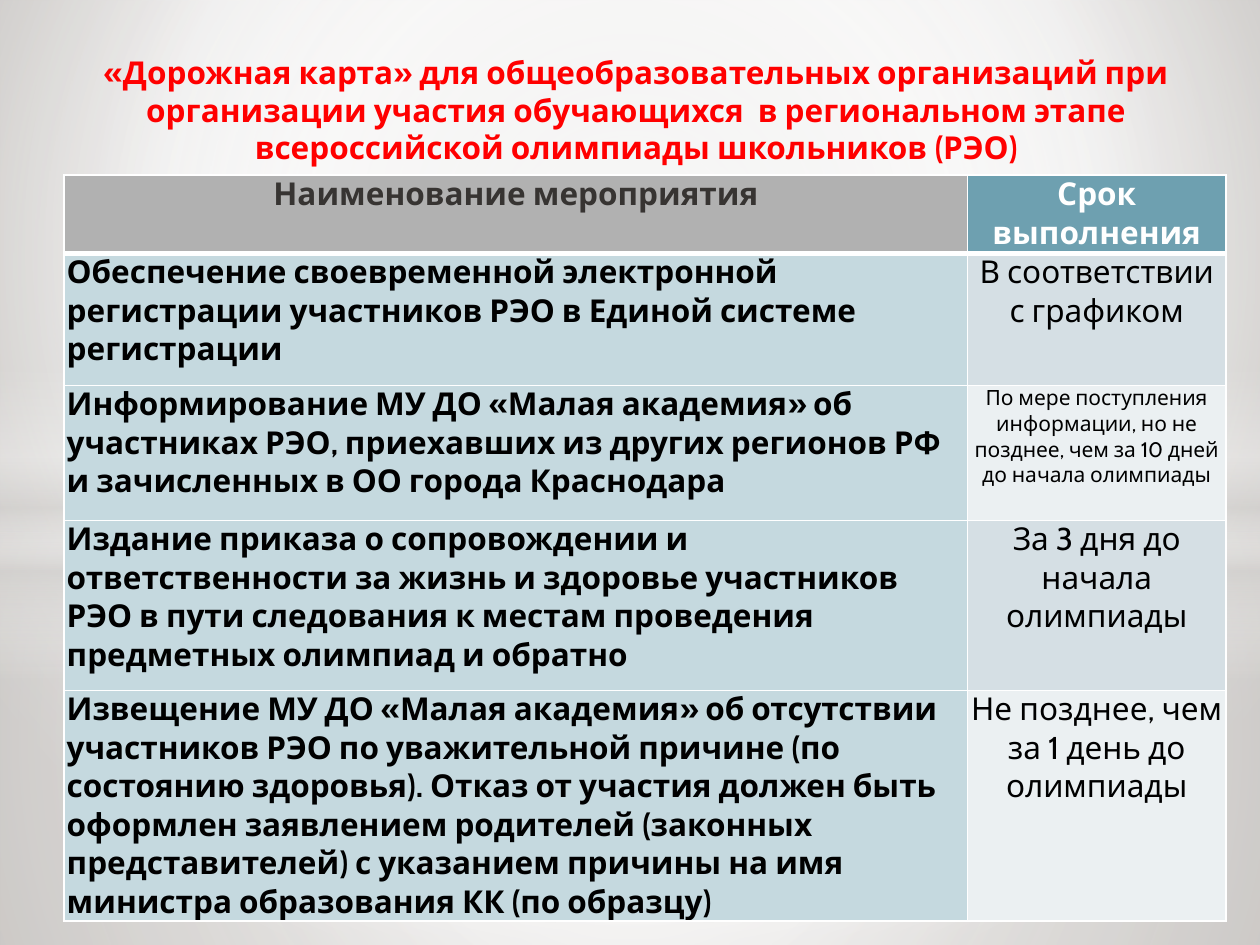
from lxml.etree import SubElement
from pptx import Presentation
from pptx.dml.color import RGBColor
from pptx.enum.shapes import MSO_SHAPE as Shape
from pptx.enum.text import MSO_ANCHOR as Anchor, PP_ALIGN as Align
from pptx.oxml import parse_xml
from pptx.oxml.ns import nsdecls, qn
from pptx.util import Emu, Inches, Pt

TITLE = ("«Дорожная карта» для общеобразовательных организаций при организации участия "
         "обучающихся  в региональном этапе всероссийской олимпиады школьников (РЭО)")
HEADER = ("Наименование мероприятия", "Срок выполнения")
EVENTS = [
    ("Обеспечение своевременной электронной регистрации участников РЭО в Единой системе "
     "регистрации", "В соответствии с графиком"),
    ("Информирование МУ ДО «Малая академия» об участниках РЭО, приехавших из других регионов "
     "РФ и зачисленных в ОО города Краснодара",
     "По мере поступления информации, но не позднее, чем за 10 дней до начала олимпиады"),
    ("Издание приказа о сопровождении и ответственности за жизнь и здоровье участников РЭО в "
     "пути следования к местам проведения предметных олимпиад и обратно",
     "За 3 дня до начала олимпиады"),
    ("Извещение МУ ДО «Малая академия» об отсутствии участников РЭО по уважительной причине "
     "(по состоянию здоровья). Отказ от участия должен быть оформлен заявлением родителей "
     "(законных представителей) с указанием причины на имя министра образования КК (по образцу)",
     "Не позднее, чем за 1 день до олимпиады"),
]
SMALL_ROWS = {2}

THEME = {
    "font": "Cabin", "size": 18, "small": 12,
    "title": "FF0000", "text": "000000", "line": "FFFFFF",
    "head_text": ("373432", "FFFFFF"), "head_fill": ("B1B1B1", "6EA0B0"),
    "event_fill": "C5D9DF", "term_fill": ("D5DFE4", "EBF0F2"),
    "haze": "FFFFFF", "shade": "D4D2D0",
}
HAZE, SHADE = THEME["haze"], THEME["shade"]
CENTRE = (50, 50, 50, 50)
BACKDROP = ([(0, "CDCAC7", 100), (60, HAZE, 100), (100, "AFA9A4", 100)], (20, 10, 20, 60))
LAYERS = [
    (Shape.RECTANGLE, 4.23, 3.27,
     [(0, HAZE, 91), (37, HAZE, 76), (100, SHADE, 79)], CENTRE),
    (Shape.RECTANGLE, 0, 4.23,
     [(0, HAZE, 89), (48, HAZE, 62), (100, SHADE, 79)], CENTRE),
    (Shape.RECTANGLE, 2.9, 2.5,
     [(0, HAZE, 0), (29, HAZE, 30), (45, SHADE, 40), (55, HAZE, 26),
      (65, SHADE, 60), (100, HAZE, 0)], None),
    (Shape.OVAL, 1.75, 5.58, [(0, HAZE, 100), (54, HAZE, 0)], CENTRE),
]
COLS = (7.17, 2.05)
ROWS = (0.62, 1.05, 1.07, 1.35, 1.83)
TABLE_AT = (0.51, 1.39)
TITLE_AT = (0.54, 0.42, 9.02, 0.94)


def write(tf, text, size=THEME["size"], color=THEME["text"], bold=False, align=Align.CENTER):
    tf.word_wrap = True
    p = tf.paragraphs[0]
    p.alignment = align
    r = p.add_run()
    r.text = text
    r.font.name, r.font.size, r.font.bold = THEME["font"], Pt(size), bold
    r.font.color.rgb = RGBColor.from_string(color)


def set_gradient(props, stops, focus):
    grad = parse_xml(f'<a:gradFill {nsdecls("a")} rotWithShape="1"/>')
    gs_list = SubElement(grad, qn("a:gsLst"))
    for pos, color, alpha in stops:
        gs = SubElement(gs_list, qn("a:gs"), pos=str(pos * 1000))
        clr = SubElement(gs, qn("a:srgbClr"), val=color)
        SubElement(clr, qn("a:alpha"), val=str(alpha * 1000))
    if focus:
        way = SubElement(grad, qn("a:path"), {"path": "circle"})
        SubElement(way, qn("a:fillToRect"), {k: str(v * 1000) for k, v in zip("ltrb", focus)})
    else:
        SubElement(grad, qn("a:lin"), ang=str(90 * 60000), scaled="0")
    props.replace(props.find(qn("a:solidFill")), grad)


def set_borders(cell, **widths):
    tc_pr = cell._tc.get_or_add_tcPr()
    for i, side in enumerate("LRTB"):
        ln = parse_xml(f'<a:ln{side} {nsdecls("a")} w="{Pt(widths.get(side, 1))}">'
                       f'<a:solidFill><a:srgbClr val="{THEME["line"]}"/></a:solidFill>'
                       f'</a:ln{side}>')
        tc_pr.insert(i, ln)


def fill_cell(cell, text, fill, borders, **fmt):
    cell.margin_left = cell.margin_right = Inches(0.02)
    cell.margin_top = cell.margin_bottom = Emu(0)
    cell.vertical_anchor = Anchor.TOP
    cell.fill.solid()
    cell.fill.fore_color.rgb = RGBColor.from_string(fill)
    set_borders(cell, **borders)
    write(cell.text_frame, text, **fmt)


def add_backdrop(prs, s):
    s.background.fill.solid()
    set_gradient(s.element.find(".//" + qn("p:bgPr")), *BACKDROP)
    for kind, top, height, stops, focus in LAYERS:
        sp = s.shapes.add_shape(kind, 0, Inches(top), prs.slide_width, Inches(height))
        sp.shadow.inherit = False
        sp.line.fill.background()
        sp.fill.solid()
        set_gradient(sp.element.spPr, stops, focus)


def add_title(s):
    tf = s.shapes.add_textbox(*map(Inches, TITLE_AT)).text_frame
    tf.margin_left = tf.margin_right = tf.margin_top = tf.margin_bottom = 0
    write(tf, TITLE, color=THEME["title"], bold=True)


def add_schedule(s):
    size = (sum(COLS), sum(ROWS))
    table = s.shapes.add_table(len(ROWS), len(COLS), *map(Inches, TABLE_AT + size)).table
    table.horz_banding = False
    for col, width in zip(table.columns, COLS):
        col.width = Inches(width)
    for row, height in zip(table.rows, ROWS):
        row.height = Inches(height)
    for c, text in enumerate(HEADER):
        fill_cell(table.cell(0, c), text, THEME["head_fill"][c], {"B": 3},
                  color=THEME["head_text"][c], bold=True)
    for n, (event, term) in enumerate(EVENTS, 1):
        borders = {"T": 3} if n == 1 else {}
        fill_cell(table.cell(n, 0), event, THEME["event_fill"], borders,
                  bold=True, align=Align.LEFT)
        fill_cell(table.cell(n, 1), term, THEME["term_fill"][(n - 1) % 2], borders,
                  size=THEME["small" if n in SMALL_ROWS else "size"])


def main():
    prs = Presentation()
    prs.slide_width, prs.slide_height = Inches(10), Inches(7.5)
    s = prs.slides.add_slide(prs.slide_layouts[6])
    add_backdrop(prs, s)
    add_title(s)
    add_schedule(s)
    prs.save("out.pptx")


if __name__ == "__main__":
    main()
